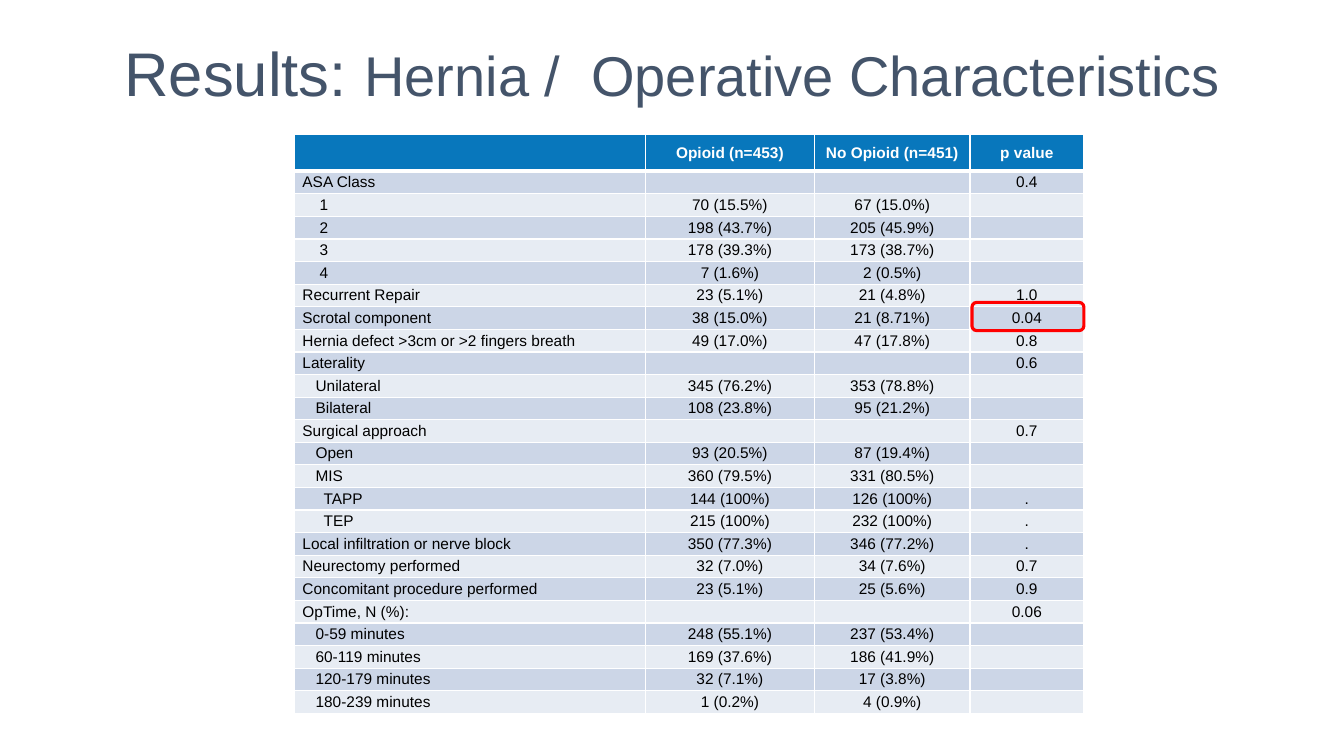
"""Build the slide comparing hernia and operative characteristics by opioid group."""
from dataclasses import dataclass

from lxml import etree
from pptx import Presentation
from pptx.dml.color import RGBColor
from pptx.enum.shapes import MSO_SHAPE
from pptx.enum.text import MSO_ANCHOR, PP_ALIGN
from pptx.oxml.ns import qn
from pptx.util import Inches, Pt

CENTER, LEFT = PP_ALIGN.CENTER, PP_ALIGN.LEFT
MIDDLE = MSO_ANCHOR.MIDDLE
ROUNDED = MSO_SHAPE.ROUNDED_RECTANGLE


@dataclass(frozen=True)
class Theme:
    font: str = "Arial"
    title: str = "44546A"
    header: str = "0877BC"
    dark_band: str = "CCD6E7"
    light_band: str = "E7ECF3"
    white: str = "FFFFFF"
    black: str = "000000"
    highlight: str = "FF0000"
    lead_size: int = 44
    title_size: int = 40
    table_size: int = 11


THEME = Theme()

HEADER = ("", "Opioid (n=453)", "No Opioid (n=451)", "p value")
ROWS = [
    ("main", "ASA Class", "", "", "0.4"),
    ("class", "1", "70 (15.5%)", "67 (15.0%)", ""),
    ("class", "2", "198 (43.7%)", "205 (45.9%)", ""),
    ("class", "3", "178 (39.3%)", "173 (38.7%)", ""),
    ("class", "4", "7 (1.6%)", "2 (0.5%)", ""),
    ("main", "Recurrent Repair", "23 (5.1%)", "21 (4.8%)", "1.0"),
    ("main", "Scrotal component", "38 (15.0%)", "21 (8.71%)", "0.04"),
    ("main", "Hernia defect >3cm or >2 fingers breath", "49 (17.0%)", "47 (17.8%)", "0.8"),
    ("main", "Laterality", "", "", "0.6"),
    ("sub", "Unilateral", "345 (76.2%)", "353 (78.8%)", ""),
    ("sub", "Bilateral", "108 (23.8%)", "95 (21.2%)", ""),
    ("main", "Surgical approach", "", "", "0.7"),
    ("sub", "Open", "93 (20.5%)", "87 (19.4%)", ""),
    ("sub", "MIS", "360 (79.5%)", "331 (80.5%)", ""),
    ("detail", "TAPP", "144 (100%)", "126 (100%)", "."),
    ("detail", "TEP", "215 (100%)", "232 (100%)", "."),
    ("main", "Local infiltration or nerve block", "350 (77.3%)", "346 (77.2%)", "."),
    ("main", "Neurectomy performed", "32 (7.0%)", "34 (7.6%)", "0.7"),
    ("main", "Concomitant procedure performed", "23 (5.1%)", "25 (5.6%)", "0.9"),
    ("main", "OpTime, N (%):", "", "", "0.06"),
    ("sub", "0-59 minutes", "248 (55.1%)", "237 (53.4%)", ""),
    ("sub", "60-119 minutes", "169 (37.6%)", "186 (41.9%)", ""),
    ("sub", "120-179 minutes", "32 (7.1%)", "17 (3.8%)", ""),
    ("sub", "180-239 minutes", "1 (0.2%)", "4 (0.9%)", ""),
]
INDENTS = {"main": 0.08, "sub": 0.21, "class": 0.25, "detail": 0.29}
COLUMN_WIDTHS = (3.48, 1.68, 1.54, 1.13)
TABLE_HEIGHT, HEADER_HEIGHT = 5.75, 0.37


def style_run(span, size, color, bold=False):
    span.font.name = THEME.font
    span.font.size = Pt(size)
    span.font.bold = bold
    span.font.color.rgb = RGBColor.from_string(color)


def add_borders(cell, top, bottom):
    properties = cell._tc.get_or_add_tcPr()
    for side, width in (("L", 1), ("R", 1), ("T", top), ("B", bottom)):
        line = etree.SubElement(properties, qn(f"a:ln{side}"), w=str(Pt(width)))
        fill = etree.SubElement(line, qn("a:solidFill"))
        etree.SubElement(fill, qn("a:srgbClr"), val=THEME.white)


deck = Presentation()
deck.slide_width, deck.slide_height = Inches(13.33), Inches(7.5)
page = deck.slides.add_slide(deck.slide_layouts[6])

title = page.shapes.add_textbox(Inches(0), Inches(0.03), Inches(13.33), Inches(1.45))
title.text_frame.word_wrap = True
title.text_frame.vertical_anchor = MIDDLE
para = title.text_frame.paragraphs[0]
para.alignment = CENTER
para.line_spacing = 0.9
for text, size in (
    ("Results: ", THEME.lead_size),
    ("Hernia /  Operative Characteristics", THEME.title_size),
):
    span = para.add_run()
    span.text = text
    style_run(span, size, THEME.title)

table = page.shapes.add_table(
    len(ROWS) + 1, len(HEADER), Inches(2.92), Inches(1.33),
    Inches(sum(COLUMN_WIDTHS)), Inches(TABLE_HEIGHT),
).table
table.horz_banding = False
for column, width in zip(table.columns, COLUMN_WIDTHS):
    column.width = Inches(width)

for row_index, (level, *values) in enumerate([("main", *HEADER), *ROWS]):
    is_header = row_index == 0
    if is_header:
        height, band = HEADER_HEIGHT, THEME.header
    else:
        height = (TABLE_HEIGHT - HEADER_HEIGHT) / len(ROWS)
        band = THEME.dark_band if row_index % 2 else THEME.light_band
    table.rows[row_index].height = Inches(height)
    for column_index, value in enumerate(values):
        is_label = column_index == 0
        cell = table.cell(row_index, column_index)
        cell.margin_left = Inches(INDENTS[level] if is_label else 0)
        cell.margin_right = cell.margin_top = cell.margin_bottom = Inches(0)
        cell.vertical_anchor = MIDDLE
        add_borders(cell, 3 if row_index == 1 else 1, 3 if is_header else 1)
        cell.fill.solid()
        cell.fill.fore_color.rgb = RGBColor.from_string(band)
        cell.text_frame.text = value
        para = cell.text_frame.paragraphs[0]
        para.alignment = LEFT if is_label else CENTER
        for span in para.runs:
            style_run(span, THEME.table_size, THEME.white if is_header else THEME.black, is_header)
        if not value:
            etree.SubElement(para._p, qn("a:endParaRPr"), sz=str(THEME.table_size * 100))

highlight = page.shapes.add_shape(ROUNDED, Inches(9.64), Inches(3), Inches(1.11), Inches(0.28))
highlight.shadow.inherit = False
highlight.fill.background()
highlight.line.color.rgb = RGBColor.from_string(THEME.highlight)
highlight.line.width = Pt(2.25)

deck.save("out.pptx")
